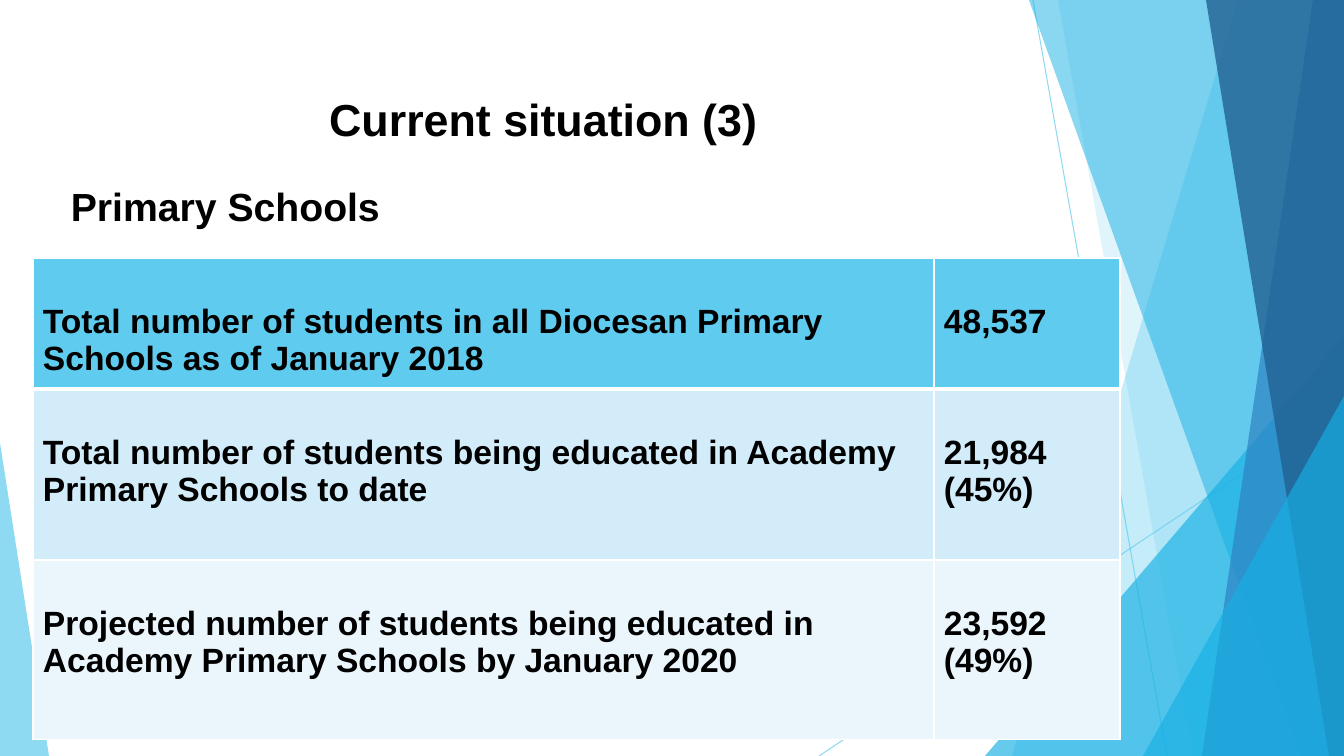
import pptx
import pptx.dml.color
import pptx.enum.shapes
import pptx.enum.text
import pptx.oxml
import pptx.oxml.ns
import pptx.util

RGBColor = pptx.dml.color.RGBColor
SKY = RGBColor(0x5F, 0xCB, 0xEF)
CYAN = RGBColor(0x17, 0xB0, 0xE4)
BLUE = RGBColor(0x2E, 0x83, 0xC3)
NAVY = RGBColor(0x22, 0x62, 0x92)
PALE = RGBColor(0xD2, 0xEC, 0xF9)
PALEST = RGBColor(0xEA, 0xF6, 0xFC)
WHITE = RGBColor(0xFF, 0xFF, 0xFF)
BLACK = RGBColor(0, 0, 0)

SCALE = 914400 / 100.8
WIDTH, HEIGHT = 1344, 756
LEFT = pptx.enum.text.PP_ALIGN.LEFT
CENTER = pptx.enum.text.PP_ALIGN.CENTER

ROWS = [
    (131, SKY, "Total number of students in all Diocesan Primary Schools as of January 2018",
     ["48,537"]),
    (171, PALE, "Total number of students being educated in Academy Primary Schools to date",
     ["21,984", "(45%)"]),
    (180, PALEST, "Projected number of students being educated in Academy Primary Schools by January 2020",
     ["23,592", "(49%)"]),
]


def px(length):
    return pptx.util.Emu(round(length * SCALE))


def set_alpha(element, percent):
    colour = element.find(".//" + pptx.oxml.ns.qn("a:srgbClr"))
    alpha = colour.makeelement(pptx.oxml.ns.qn("a:alpha"), {"val": str(percent * 1000)})
    colour.append(alpha)


def paint(shape, colour, opacity):
    shape.shadow.inherit = False
    shape.fill.solid()
    shape.fill.fore_color.rgb = colour
    shape.line.fill.background()
    set_alpha(shape.fill._xPr, opacity)


def add_band(slide, top, bottom, colour, opacity):
    builder = slide.shapes.build_freeform(top, 0, scale=SCALE)
    builder.add_line_segments([(WIDTH, 0), (WIDTH, HEIGHT), (bottom, HEIGHT)], close=True)
    paint(builder.convert_to_shape(), colour, opacity)


def add_corner(slide, left, top, width, peak, colour, opacity):
    corner = slide.shapes.add_shape(
        pptx.enum.shapes.MSO_SHAPE.ISOSCELES_TRIANGLE,
        px(left), px(top), px(width), px(HEIGHT - top))
    corner.adjustments[0] = peak
    paint(corner, colour, opacity)


def add_ray(slide, x1, y1, x2, y2):
    ray = slide.shapes.add_connector(
        pptx.enum.shapes.MSO_CONNECTOR.STRAIGHT, px(x1), px(y1), px(x2), px(y2))
    ray.line.color.rgb = SKY
    ray.line.width = pptx.util.Pt(0.75)
    properties = ray.line._ln.getparent()
    set_alpha(properties, 70)
    properties.append(properties.makeelement(pptx.oxml.ns.qn("a:effectLst"), {}))


def write_paragraph(paragraph, text, *, size=24, align=LEFT, before=0):
    paragraph.alignment = align
    paragraph.space_before = pptx.util.Pt(before)
    run = paragraph.add_run()
    run.text = text
    run.font.name = "Arial"
    run.font.size = pptx.util.Pt(size)
    run.font.bold = True
    run.font.color.rgb = BLACK


def set_borders(cell, top, bottom):
    properties = cell._tc.get_or_add_tcPr()
    sides = [("lnL", 1), ("lnR", 1), ("lnT", top), ("lnB", bottom)]
    for position, (side, points) in enumerate(sides):
        properties.insert(position, pptx.oxml.parse_xml(
            f'<a:{side} {pptx.oxml.ns.nsdecls("a")} w="{pptx.util.Pt(points)}">'
            f'<a:solidFill><a:srgbClr val="{WHITE}"/></a:solidFill></a:{side}>'))


def fill_cell(cell, lines, colour):
    cell.fill.solid()
    cell.fill.fore_color.rgb = colour
    cell.margin_top = px(45)
    cell.margin_left = cell.margin_right = px(10)
    cell.margin_bottom = px(5)
    frame = cell.text_frame
    for number, line in enumerate(lines):
        paragraph = frame.add_paragraph() if number else frame.paragraphs[0]
        write_paragraph(paragraph, line)


def add_backdrop(slide):
    add_ray(slide, 1033, 0, 1167, HEIGHT)
    add_ray(slide, WIDTH, 406, 819, HEIGHT)
    add_band(slide, 1238, 1012, SKY, 36)
    add_band(slide, 1058, 1193, SKY, 20)
    add_corner(slide, 985, 336, 359, 1, CYAN, 66)
    add_band(slide, 1029, 1301, CYAN, 50)
    add_band(slide, 1313, 1202, BLUE, 70)
    add_band(slide, 1206, 1329, NAVY, 80)
    add_corner(slide, 1143, 396, 201, 1, CYAN, 66)
    add_corner(slide, 0, 443, 49, 0, SKY, 70)


def add_heading(slide):
    heading = slide.shapes.add_textbox(px(61), px(84), px(965), px(221)).text_frame
    heading.word_wrap = True
    heading.margin_top = px(8)
    write_paragraph(heading.paragraphs[0], "Current situation (3)", size=32, align=CENTER)
    write_paragraph(heading.add_paragraph(), "Primary Schools", size=28, before=26)


def add_student_table(slide):
    total_height = sum(row[0] for row in ROWS)
    students = slide.shapes.add_table(
        len(ROWS), 2, px(33), px(258), px(1087), px(total_height)).table
    students.columns[0].width = px(901)
    students.columns[1].width = px(186)
    for index, (height, colour, measure, figures) in enumerate(ROWS):
        students.rows[index].height = px(height)
        for column, lines in enumerate([[measure], figures]):
            cell = students.cell(index, column)
            fill_cell(cell, lines, colour)
            set_borders(cell, 3 if index == 1 else 1, 3 if index == 0 else 1)


def main():
    presentation = pptx.Presentation()
    presentation.slide_width = px(WIDTH)
    presentation.slide_height = px(HEIGHT)
    slide = presentation.slides.add_slide(presentation.slide_layouts[6])
    add_backdrop(slide)
    add_heading(slide)
    add_student_table(slide)
    presentation.save("out.pptx")


if __name__ == "__main__":
    main()
